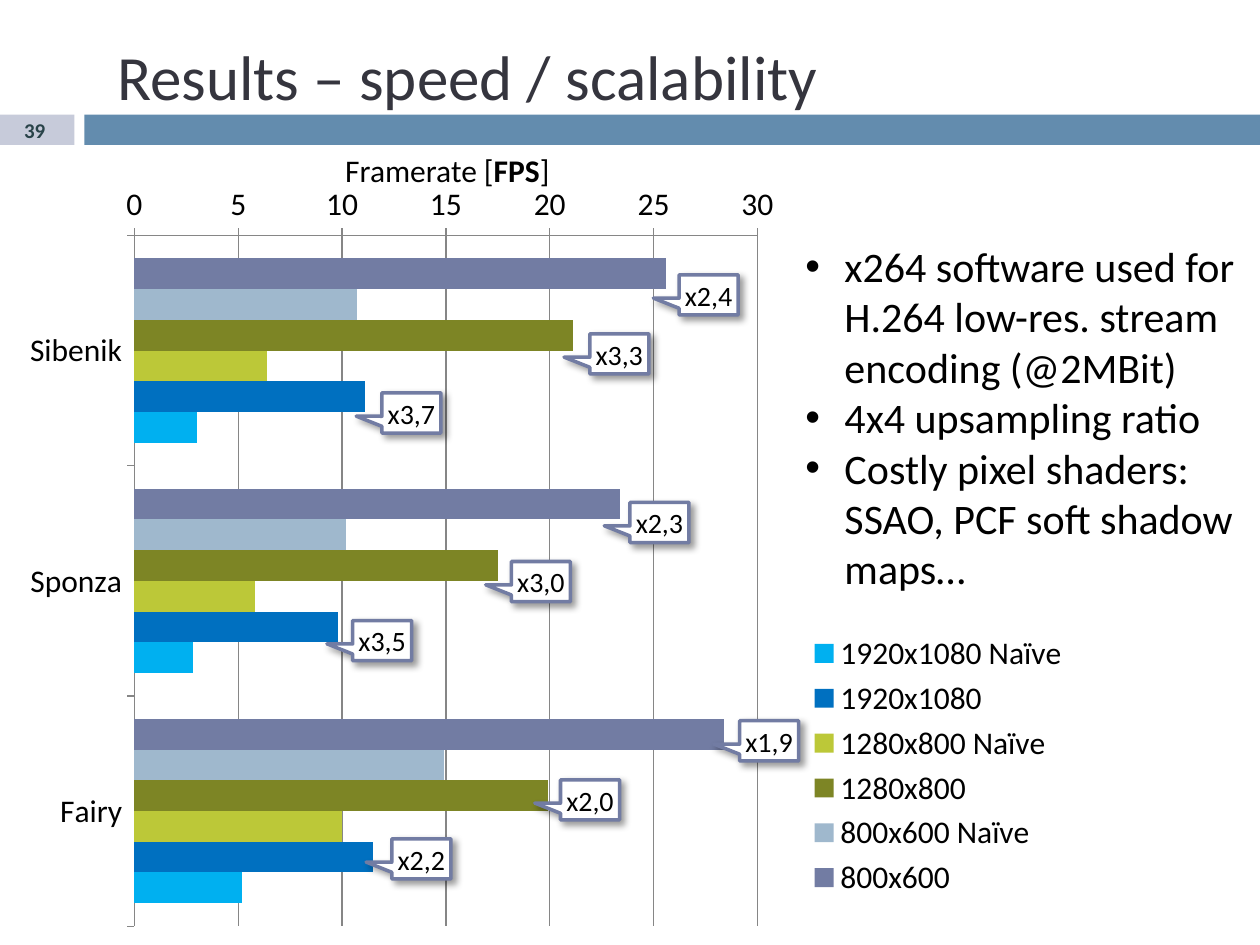
import lxml.etree
import pptx
import pptx.chart.data
import pptx.dml.color
import pptx.enum.chart
import pptx.enum.shapes
import pptx.enum.text
import pptx.oxml
import pptx.oxml.ns
import pptx.util
from pptx.util import Cm

FONT = "Calibri"
BLACK = "000000"
OUTLINE = "727CA3"
SCENES = ["Sibenik", "Sponza", "Fairy"]
FRAMERATES = [
    ("800x600", "727CA3", (25.6, 23.4, 28.4)),
    ("800x600 Naïve", "9FB8CD", (10.7, 10.2, 14.9)),
    ("1280x800", "7D8525", (21.1, 17.5, 19.9)),
    ("1280x800 Naïve", "BCC838", (6.4, 5.8, 10)),
    ("1920x1080", "0070C0", (11.1, 9.8, 11.5)),
    ("1920x1080 Naïve", "00B0F0", (3, 2.8, 5.2)),
]
SPEEDUPS = [
    (5.54, [("x2,4", 13.69), ("x3,3", 11.89), ("x3,7", 7.7)]),
    (10.13, [("x2,3", 12.7), ("x3,0", 10.31), ("x3,5", 7.11)]),
    (14.53, [("x1,9", 14.91), ("x2,0", 11.3), ("x2,2", 7.9)]),
]
SPEEDUP_STEP = 1.19
REMARKS = [
    "x264 software used for H.264 low-res. stream encoding (@2MBit)",
    "4x4 upsampling ratio",
    "Costly pixel shaders: SSAO, PCF soft shadow maps…",
]


def rgb(value):
    """Turn a hex string into a colour."""
    return pptx.dml.color.RGBColor.from_string(value)


def style_font(font, size, color=BLACK, bold=False):
    """Set face, size, colour and weight of a font."""
    font.name = FONT
    font.size = pptx.util.Pt(size)
    font.color.rgb = rgb(color)
    font.bold = bold


def place(shape, left, top, width, height):
    """Move and size a shape, in centimetres."""
    shape.left, shape.top = Cm(left), Cm(top)
    shape.width, shape.height = Cm(width), Cm(height)


def add_box(slide, kind, left, top, width, height, fill):
    """Add a filled preset shape without line or shadow."""
    box = slide.shapes.add_shape(kind, Cm(left), Cm(top), Cm(width), Cm(height))
    box.shadow.inherit = False
    box.fill.solid()
    box.fill.fore_color.rgb = rgb(fill)
    box.line.fill.background()
    return box


def write_centred(shape, text, size, color=BLACK, bold=False):
    """Write one centred, unwrapped line in a shape."""
    frame = shape.text_frame
    frame.text = text
    frame.word_wrap = False
    frame.vertical_anchor = pptx.enum.text.MSO_ANCHOR.MIDDLE
    frame.paragraphs[0].alignment = pptx.enum.text.PP_ALIGN.CENTER
    style_font(frame.paragraphs[0].runs[0].font, size, color, bold)


def add_header(slide):
    """Fill the title and draw the band with the slide number."""
    rectangle = pptx.enum.shapes.MSO_SHAPE.RECTANGLE
    add_box(slide, rectangle, 1.7, 2.31, 23.7, 0.61, "638CAE")
    number = add_box(slide, rectangle, -0.1, 2.31, 1.6, 0.61, "C7CBDA")
    write_centred(number, "39", 12, "294349", True)
    title = slide.shapes.title
    place(title, 2.11, 0.91, 22.8, 1.2)
    frame = title.text_frame
    frame.text = "Results – speed / scalability"
    frame.auto_size = pptx.enum.text.MSO_AUTO_SIZE.NONE
    frame.vertical_anchor = pptx.enum.text.MSO_ANCHOR.MIDDLE
    frame.paragraphs[0].alignment = pptx.enum.text.PP_ALIGN.LEFT
    style_font(frame.paragraphs[0].runs[0].font, 36, "35353E")


def add_remarks(slide):
    """Fill the body placeholder with the bulleted remarks."""
    body = slide.placeholders[1]
    place(body, 14.71, 4.72, 10.9, 7.44)
    frame = body.text_frame
    frame.text = "\n".join(REMARKS)
    frame.auto_size = pptx.enum.text.MSO_AUTO_SIZE.SHAPE_TO_FIT_TEXT
    for remark in frame.paragraphs:
        remark.level = 1
        remark.space_before = pptx.util.Pt(0)
        properties = remark._p.get_or_add_pPr()
        properties.set("marL", str(Cm(2.06)))
        properties.set("indent", str(Cm(-0.79)))
        for tag, name, value in (("buFont", "typeface", "Arial"), ("buChar", "char", "•")):
            bullet = lxml.etree.SubElement(properties, pptx.oxml.ns.qn("a:" + tag))
            bullet.set(name, value)
        style_font(remark.runs[0].font, 24)


def chart_layout(x, y, w, h, inner=False):
    """Make a manual layout element from fractions of the chart."""
    target = '<c:layoutTarget val="inner"/>' if inner else ""
    sizes = "".join(f'<c:{k} val="{v}"/>' for k, v in zip("xywh", (x, y, w, h)))
    return pptx.oxml.parse_xml(
        f'<c:layout {pptx.oxml.ns.nsdecls("c")}><c:manualLayout>{target}'
        f'<c:xMode val="edge"/><c:yMode val="edge"/>{sizes}</c:manualLayout></c:layout>'
    )


def style_axes(chart):
    """Reverse the scenes and scale the framerates in steps of five."""
    scenes, framerates = chart.category_axis, chart.value_axis
    scenes.reverse_order = True
    framerates.minimum_scale, framerates.maximum_scale = 0, 30
    framerates.major_unit = 5
    framerates.has_major_gridlines = True
    lines = [scenes.format.line, framerates.format.line, framerates.major_gridlines.format.line]
    for line in lines:
        line.color.rgb = rgb("868686")
        line.width = pptx.util.Pt(0.75)
    for axis in (scenes, framerates):
        axis.major_tick_mark = pptx.enum.chart.XL_TICK_MARK.OUTSIDE
        style_font(axis.tick_labels.font, 18)


def add_framerate_chart(slide):
    """Add the clustered bars with their legend."""
    data = pptx.chart.data.CategoryChartData()
    data.categories = SCENES
    for resolution, _, values in FRAMERATES:
        data.add_series(resolution, values)
    chart = slide.shapes.add_chart(
        pptx.enum.chart.XL_CHART_TYPE.BAR_CLUSTERED, Cm(0), Cm(3.73), Cm(21.69), Cm(14.96), data
    ).chart
    style_font(chart.font, 18)
    chart.has_title = False
    style_axes(chart)
    plot = chart.plots[0]
    plot.gap_width, plot.overlap = 150, 0
    plot.vary_by_categories = False
    for series, (_, color, _) in zip(plot.series, FRAMERATES):
        series.format.fill.solid()
        series.format.fill.fore_color.rgb = rgb(color)
    chart.has_legend = True
    legend = chart.legend
    legend.position = pptx.enum.chart.XL_LEGEND_POSITION.RIGHT
    legend.include_in_layout = False
    style_font(legend.font, 18)
    for old in legend._element.findall(pptx.oxml.ns.qn("c:layout")):
        legend._element.remove(old)
    legend._element.insert(1, chart_layout(0.747, 0.596, 0.25, 0.372))
    area = chart._chartSpace.chart.plotArea
    for old in area.findall(pptx.oxml.ns.qn("c:layout")):
        area.remove(old)
    area.insert(0, chart_layout(0.125, 0.067, 0.579, 0.932, inner=True))


def add_axis_title(slide):
    """Write the framerate heading above the chart."""
    heading = slide.shapes.add_textbox(Cm(6.71), Cm(2.92), Cm(4.65), Cm(1.02))
    heading.text_frame.word_wrap = False
    paragraph = heading.text_frame.paragraphs[0]
    for part, bold in (("Framerate [", False), ("FPS", True), ("]", False)):
        run = paragraph.add_run()
        run.text = part
        style_font(run.font, 18, bold=bold)


def add_speedup(slide, label, left, top):
    """Add a shadowed callout with a speedup factor."""
    kind = pptx.enum.shapes.MSO_SHAPE.RECTANGULAR_CALLOUT
    callout = add_box(slide, kind, left, top, 1.19, 0.81, "FFFFFF")
    callout.adjustments[0], callout.adjustments[1] = -0.936, 0.081
    callout.line.color.rgb = rgb(OUTLINE)
    callout.line.width = pptx.util.Pt(2)
    effects = callout._element.spPr.find(pptx.oxml.ns.qn("a:effectLst"))
    effects.append(pptx.oxml.parse_xml(
        f'<a:outerShdw {pptx.oxml.ns.nsdecls("a")} blurRad="50800" dist="38100" dir="2700000">'
        f'<a:srgbClr val="{BLACK}"><a:alpha val="40000"/></a:srgbClr></a:outerShdw>'
    ))
    write_centred(callout, label, 16)


def main():
    """Build the slide and save it."""
    deck = pptx.Presentation()
    deck.slide_width, deck.slide_height = Cm(25.4), Cm(19.05)
    slide = deck.slides.add_slide(deck.slide_layouts[1])
    add_header(slide)
    add_framerate_chart(slide)
    add_axis_title(slide)
    add_remarks(slide)
    for scene_top, speedups in SPEEDUPS:
        for row, (label, left) in enumerate(speedups):
            add_speedup(slide, label, left, scene_top + row * SPEEDUP_STEP)
    deck.save("out.pptx")


if __name__ == "__main__":
    main()
